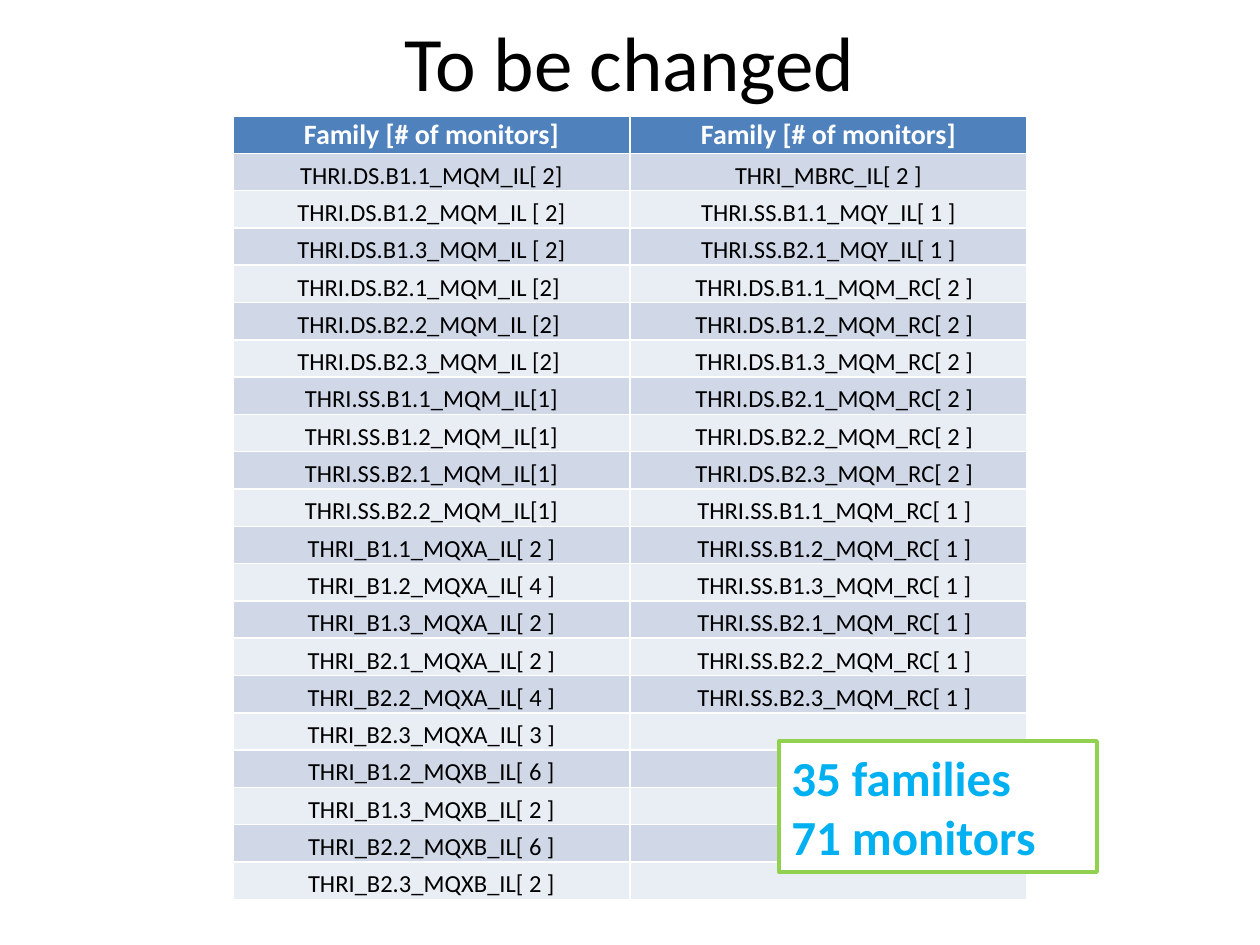
"""Build the "To be changed" slide: a table of monitor families and a totals box."""
from pptx import Presentation
from pptx.dml.color import RGBColor as RGB
from pptx.enum.shapes import MSO_SHAPE as SHAPE
from pptx.enum.text import MSO_ANCHOR as ANCHOR, PP_ALIGN as ALIGN
from pptx.util import Emu, Pt

COLORS = {"black": "000000", "white": "FFFFFF", "header": "4F81BD",
          "odd": "D0D8E8", "even": "E9EDF4", "green": "92D050", "cyan": "00B0F0"}
HEADER = "Family [# of monitors]"
LEFT = [
    "THRI.DS.B1.1_MQM_IL[ 2]", "THRI.DS.B1.2_MQM_IL [ 2]", "THRI.DS.B1.3_MQM_IL [ 2]",
    "THRI.DS.B2.1_MQM_IL [2] ", "THRI.DS.B2.2_MQM_IL [2] ", "THRI.DS.B2.3_MQM_IL [2] ",
    "THRI.SS.B1.1_MQM_IL[1]", "THRI.SS.B1.2_MQM_IL[1]",
    "THRI.SS.B2.1_MQM_IL[1]", "THRI.SS.B2.2_MQM_IL[1]",
    "THRI_B1.1_MQXA_IL[ 2 ]", "THRI_B1.2_MQXA_IL[ 4 ]", "THRI_B1.3_MQXA_IL[ 2 ]",
    "THRI_B2.1_MQXA_IL[ 2 ]", "THRI_B2.2_MQXA_IL[ 4 ]", "THRI_B2.3_MQXA_IL[ 3 ]",
    "THRI_B1.2_MQXB_IL[ 6 ]", "THRI_B1.3_MQXB_IL[ 2 ]",
    "THRI_B2.2_MQXB_IL[ 6 ]", "THRI_B2.3_MQXB_IL[ 2 ]",
]
RIGHT = [
    "THRI_MBRC_IL[ 2 ]", "THRI.SS.B1.1_MQY_IL[ 1 ]", "THRI.SS.B2.1_MQY_IL[ 1 ]",
    "THRI.DS.B1.1_MQM_RC[ 2 ]", "THRI.DS.B1.2_MQM_RC[ 2 ]", "THRI.DS.B1.3_MQM_RC[ 2 ]",
    "THRI.DS.B2.1_MQM_RC[ 2 ]", "THRI.DS.B2.2_MQM_RC[ 2 ]", "THRI.DS.B2.3_MQM_RC[ 2 ]",
    "THRI.SS.B1.1_MQM_RC[ 1 ]", "THRI.SS.B1.2_MQM_RC[ 1 ]", "THRI.SS.B1.3_MQM_RC[ 1 ]",
    "THRI.SS.B2.1_MQM_RC[ 1 ]", "THRI.SS.B2.2_MQM_RC[ 1 ]", "THRI.SS.B2.3_MQM_RC[ 1 ]",
]


def px(n):
    """Turn pixels into EMU at 126 px to the inch."""
    return Emu(n * 914400 // 126)


def write(tf, text, size=14, color="black", bold=False, align=ALIGN.CENTER):
    """Write each line of text as one formatted paragraph."""
    for i, line in enumerate(text.split("\n")):
        p = tf.add_paragraph() if i else tf.paragraphs[0]
        p.alignment = align
        r = p.add_run()
        r.text = line
        r.font.name, r.font.size, r.font.bold = "Calibri", Pt(size), bold
        r.font.color.rgb = RGB.from_string(COLORS[color])


prs = Presentation()
prs.slide_width, prs.slide_height = px(1260), px(945)
s = prs.slides.add_slide(prs.slide_layouts[5])

title = s.shapes.title
title.left, title.top, title.width, title.height = px(63), px(6), px(1134), px(110)
title.text_frame.vertical_anchor = ANCHOR.MIDDLE
write(title.text_frame, "To be changed", size=44)

columns = [[HEADER] + LEFT, [HEADER] + RIGHT + [""] * (len(LEFT) - len(RIGHT))]
table = s.shapes.add_table(len(columns[0]), len(columns),
                           px(233), px(116), px(794), px(784)).table
for col, names in enumerate(columns):
    for row, name in enumerate(names):
        cell = table.cell(row, col)
        indented = col == 1 and "_RC[" in name
        cell.margin_left = px(12 if indented else 0)
        cell.margin_top = cell.margin_right = cell.margin_bottom = 0
        cell.vertical_anchor = ANCHOR.BOTTOM if row else ANCHOR.MIDDLE
        fill = ("odd" if row % 2 else "even") if row else "header"
        cell.fill.solid()
        cell.fill.fore_color.rgb = RGB.from_string(COLORS[fill])
        if row:
            write(cell.text_frame, name)
        else:
            write(cell.text_frame, name, size=16, color="white", bold=True)

totals = s.shapes.add_shape(SHAPE.RECTANGLE, px(779), px(741), px(318), px(131))
totals.shadow.inherit = False
totals.fill.solid()
totals.fill.fore_color.rgb = RGB.from_string(COLORS["white"])
totals.line.color.rgb = RGB.from_string(COLORS["green"])
totals.line.width = Pt(2.25)
totals.text_frame.word_wrap = True
totals.text_frame.vertical_anchor = ANCHOR.TOP
write(totals.text_frame, "35 families\n71 monitors", size=28, color="cyan",
      bold=True, align=ALIGN.LEFT)

prs.save("out.pptx")
